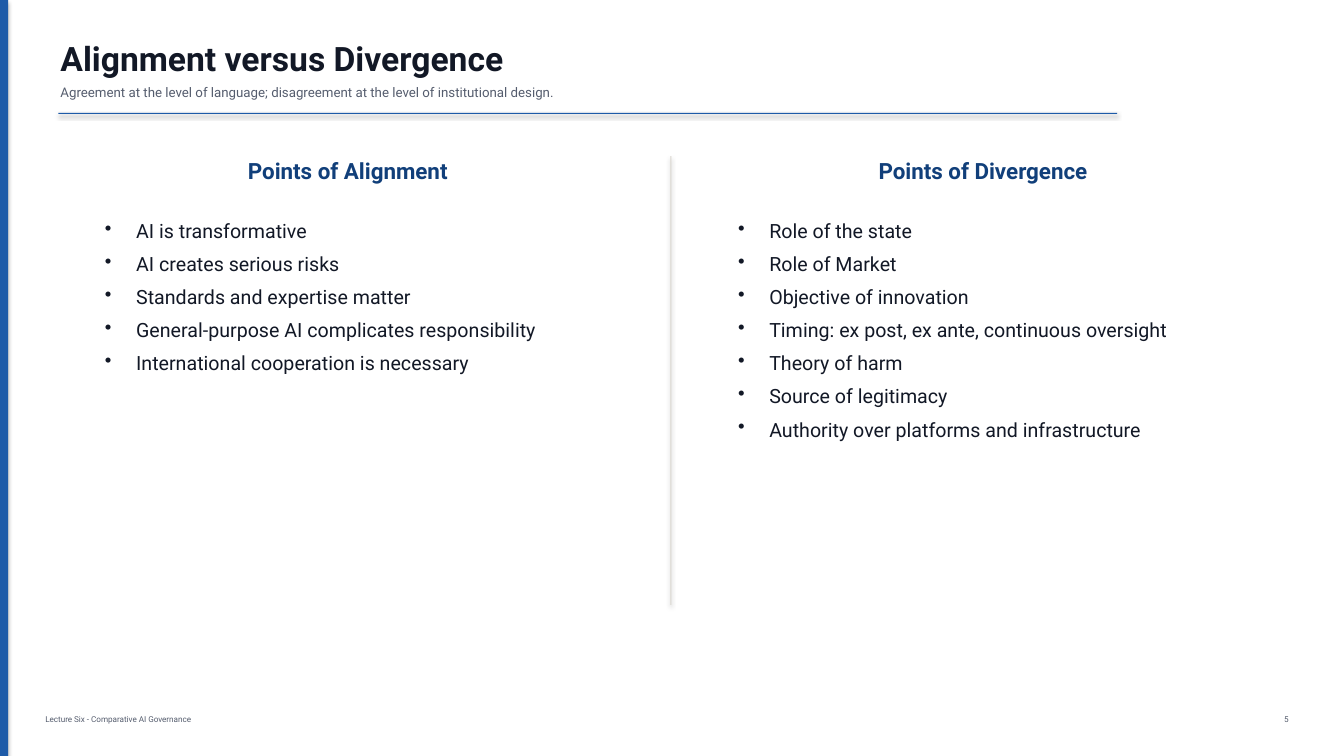
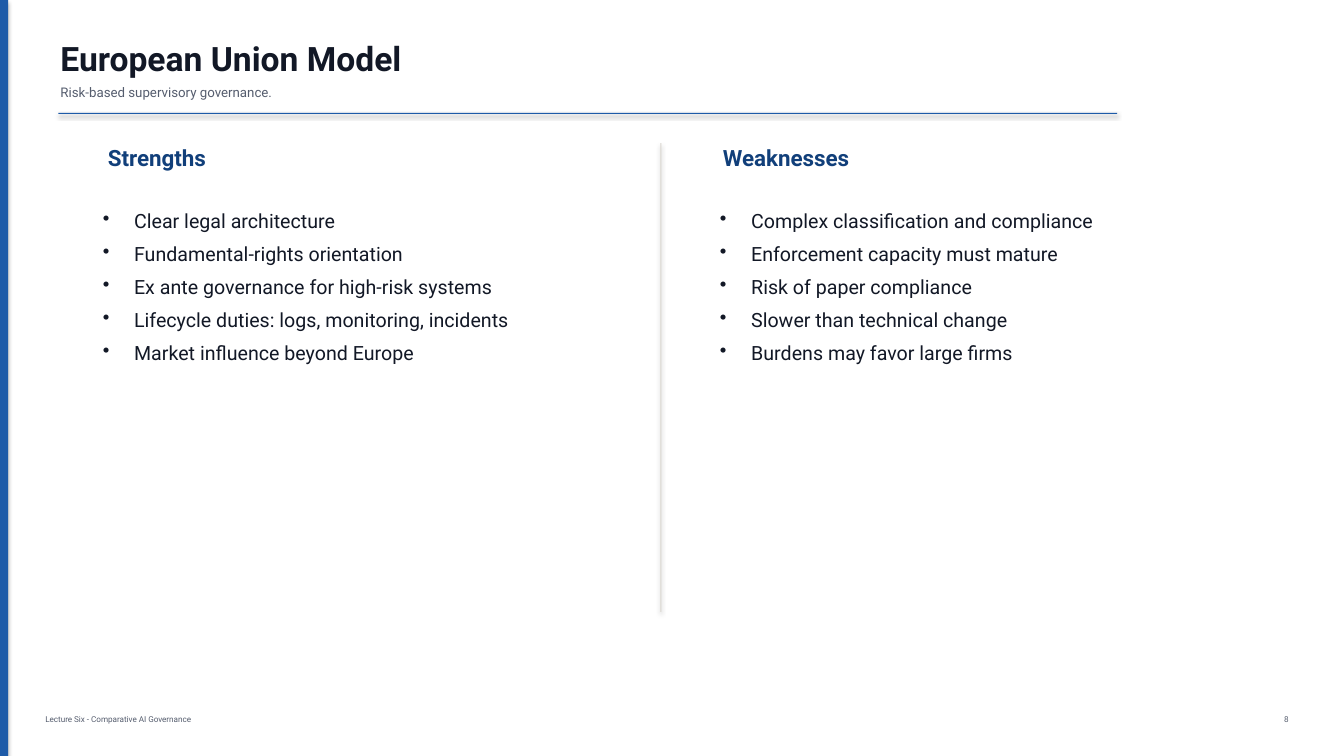
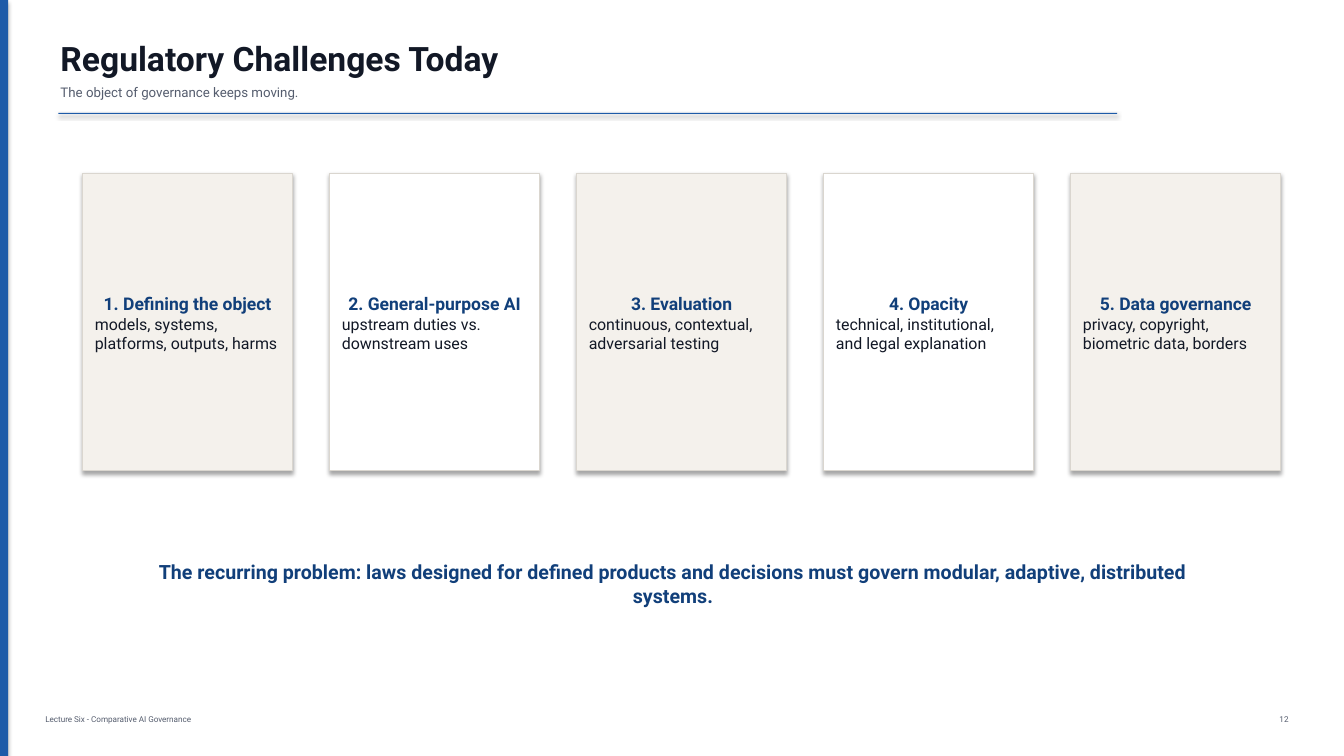
import pptx
import pptx.util
import pptx.dml.color
import pptx.enum.shapes
import pptx.enum.text
from lxml import etree

Inches, Pt = pptx.util.Inches, pptx.util.Pt
ALIGN = pptx.enum.text.PP_ALIGN
FONT = "Roboto"
FOOTER = "Lecture Six - Comparative AI Governance"
COLORS = {
    "accent": "1E5BA8",
    "heading": "113F7A",
    "ink": "121826",
    "muted": "555D6E",
    "rule": "DAD6CF",
    "sand": "F4F1EC",
    "white": "FFFFFF",
}


def rgb(name):
    return pptx.dml.color.RGBColor.from_string(COLORS[name])


def set_insets(tf, left, top, right, bottom):
    tf.margin_left, tf.margin_top = Inches(left), Inches(top)
    tf.margin_right, tf.margin_bottom = Inches(right), Inches(bottom)
    tf.word_wrap = True


def add_run(p, text, size, color, bold=False):
    r = p.add_run()
    r.text = text
    r.font.name = FONT
    r.font.size = Pt(size)
    r.font.bold = bold
    r.font.color.rgb = rgb(color)


def add_box(s, x, y, w, h):
    """Add an empty text box that grows with its text; return its text frame."""
    tf = s.shapes.add_textbox(Inches(x), Inches(y), Inches(w), Inches(h)).text_frame
    set_insets(tf, 0.02, 0.01, 0.02, 0.01)
    tf.auto_size = pptx.enum.text.MSO_AUTO_SIZE.SHAPE_TO_FIT_TEXT
    return tf


def add_label(s, x, y, w, h, text, size, color, bold=False, align=ALIGN.LEFT):
    p = add_box(s, x, y, w, h).paragraphs[0]
    p.alignment = align
    add_run(p, text, size, color, bold)


def add_rect(s, x, y, w, h, fill, line=None):
    """Add a rectangle that keeps the soft shadow of the theme."""
    sp = s.shapes.add_shape(pptx.enum.shapes.MSO_SHAPE.RECTANGLE,
                            Inches(x), Inches(y), Inches(w), Inches(h))
    sp.fill.solid()
    sp.fill.fore_color.rgb = rgb(fill)
    if line:
        sp.line.color.rgb = rgb(line)
        sp.line.width = Pt(0.8)
    else:
        sp.line.fill.background()
    return sp


def set_bullet(p):
    pPr = p._p.get_or_add_pPr()
    pPr.set("marL", str(Inches(0.31)))
    pPr.set("indent", str(-Inches(0.31)))
    bullet = etree.SubElement(pPr, pptx.oxml.ns.qn("a:buChar"))
    bullet.set("char", "•")


def add_bullets(s, x, y, items):
    tf = add_box(s, x, y, 5.05, 0.33 * len(items))
    for i, item in enumerate(items):
        p = tf.add_paragraph() if i else tf.paragraphs[0]
        set_bullet(p)
        p.line_spacing = 1.05
        p.space_after = Pt(6)
        add_run(p, item, 14, "ink")


def add_card(s, x, title, body, fill):
    sp = add_rect(s, x, 1.72, 2.08, 2.95, fill, "rule")
    tf = sp.text_frame
    set_insets(tf, 0.12, 0.1, 0.12, 0.08)
    tf.vertical_anchor = pptx.enum.text.MSO_ANCHOR.MIDDLE
    p = tf.paragraphs[0]
    p.alignment = ALIGN.CENTER
    add_run(p, title, 12.5, "heading", True)
    p = tf.add_paragraph()
    p.alignment = ALIGN.LEFT
    p.space_after = Pt(3)
    add_run(p, body, 11.4, "ink")


def new_slide(prs, title, subtitle, number):
    """Add a slide with the side band, title block and footer."""
    s = prs.slides.add_slide(prs.slide_layouts[6])
    add_rect(s, 0, 0, 0.08, 7.5, "accent")
    add_label(s, 0.58, 0.37, 10.4, 0.42, title, 24, "ink", True)
    add_label(s, 0.58, 0.83, 10.6, 0.28, subtitle, 9.5, "muted")
    add_rect(s, 0.58, 1.12, 10.5, 0.01, "accent")
    add_label(s, 0.43, 7.08, 7.2, 0.22, FOOTER, 5.8, "muted")
    add_label(s, 12.56, 7.08, 0.24, 0.22, str(number), 5.8, "muted", align=ALIGN.RIGHT)
    return s


def add_comparison(s, top, list_top, divider, columns, align):
    """Add headed bullet lists; divider is (x, height), a column
    (heading x, list x, heading, items)."""
    add_rect(s, divider[0], top, 0.01, divider[1], "rule")
    for heading_x, list_x, heading, items in columns:
        add_label(s, heading_x, top, 4.8, 0.29, heading, 16, "heading", True, align)
        add_bullets(s, list_x, list_top, items)


def alignment_slide(prs):
    s = new_slide(prs, "Alignment versus Divergence",
                  "Agreement at the level of language; "
                  "disagreement at the level of institutional design.", 5)
    add_comparison(s, 1.55, 2.15, (6.65, 4.45), [
        (1.05, 1.02, "Points of Alignment", [
            "AI is transformative",
            "AI creates serious risks",
            "Standards and expertise matter",
            "General-purpose AI complicates responsibility",
            "International cooperation is necessary",
        ]),
        (7.35, 7.3, "Points of Divergence", [
            "Role of the state",
            "Role of Market",
            "Objective of innovation",
            "Timing: ex post, ex ante, continuous oversight",
            "Theory of harm",
            "Source of legitimacy",
            "Authority over platforms and infrastructure",
        ]),
    ], ALIGN.CENTER)


def european_slide(prs):
    s = new_slide(prs, "European Union Model", "Risk-based supervisory governance.", 8)
    add_comparison(s, 1.42, 2.05, (6.55, 4.65), [
        (1.05, 1, "Strengths", [
            "Clear legal architecture",
            "Fundamental-rights orientation",
            "Ex ante governance for high-risk systems",
            "Lifecycle duties: logs, monitoring, incidents",
            "Market influence beyond Europe",
        ]),
        (7.15, 7.12, "Weaknesses", [
            "Complex classification and compliance",
            "Enforcement capacity must mature",
            "Risk of paper compliance",
            "Slower than technical change",
            "Burdens may favor large firms",
        ]),
    ], ALIGN.LEFT)


def challenges_slide(prs):
    s = new_slide(prs, "Regulatory Challenges Today",
                  "The object of governance keeps moving.", 12)
    cards = [
        ("Defining the object", "models, systems, platforms, outputs, harms"),
        ("General-purpose AI", "upstream duties vs. downstream uses"),
        ("Evaluation", "continuous, contextual, adversarial testing"),
        ("Opacity", "technical, institutional, and legal explanation"),
        ("Data governance", "privacy, copyright, biometric data, borders"),
    ]
    for i, (title, body) in enumerate(cards):
        add_card(s, 0.82 + 2.45 * i, f"{i + 1}. {title}", body,
                 "white" if i % 2 else "sand")
    add_label(s, 1.2, 5.55, 10.95, 0.6,
              "The recurring problem: laws designed for defined products and decisions "
              "must govern modular, adaptive, distributed systems.",
              14, "heading", True, ALIGN.CENTER)


def main():
    prs = pptx.Presentation()
    prs.slide_width, prs.slide_height = Inches(13.33), Inches(7.5)
    alignment_slide(prs)
    european_slide(prs)
    challenges_slide(prs)
    prs.save("out.pptx")


if __name__ == "__main__":
    main()
